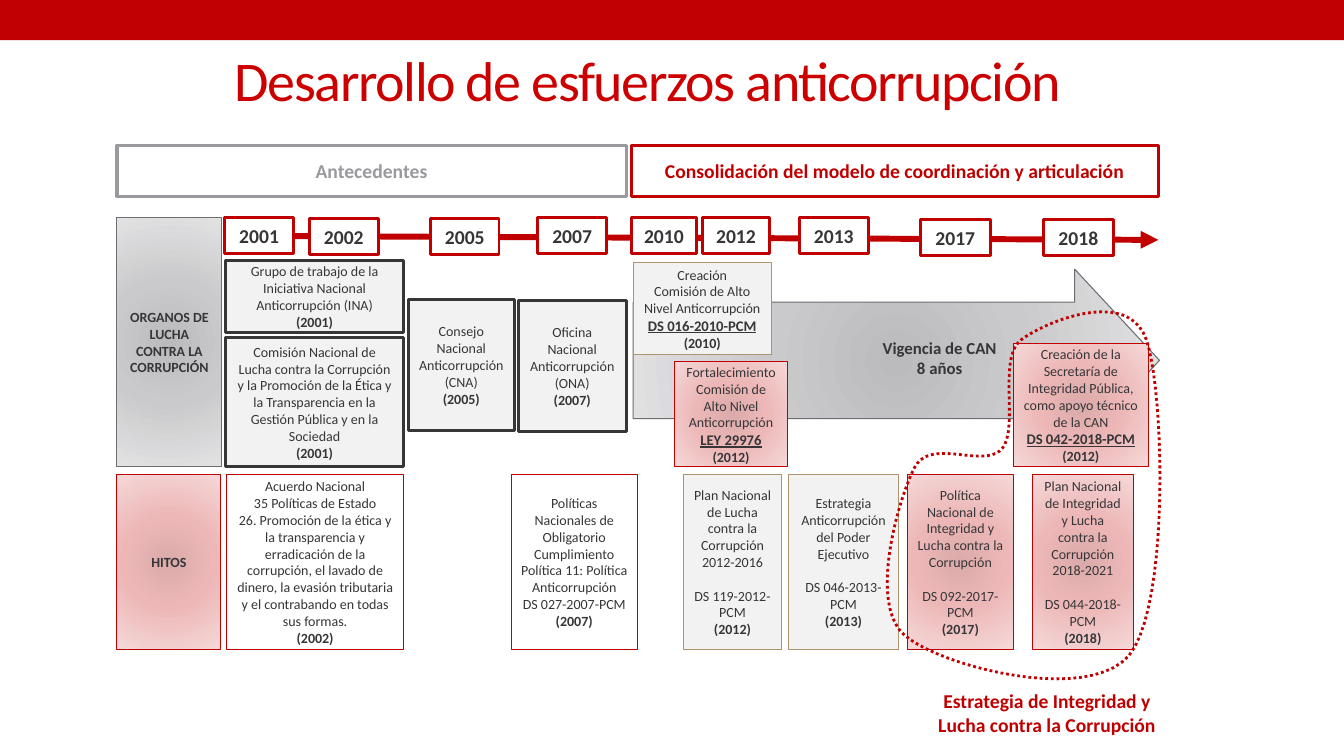
from lxml.etree import SubElement
from pptx import Presentation
from pptx.dml.color import RGBColor
from pptx.enum.dml import MSO_LINE
from pptx.enum.shapes import MSO_CONNECTOR, MSO_SHAPE
from pptx.enum.text import MSO_ANCHOR, PP_ALIGN
from pptx.oxml import parse_xml
from pptx.oxml.ns import nsdecls, qn
from pptx.util import Inches, Pt

# Content
TITLE = "Desarrollo de esfuerzos anticorrupción"
RED, INK, GREY, TAN, SLATE = "C00000", "363639", "99999E", "AC956E", "6C6C72"
ASH = ("BBBBBD", "CACACC", "E2E2E3")
ROSE = ("DBAAAA", "EDB7B7", "F5D8D8")

# Style: fill, line colour, line width
STYLES = {
    "year": ("FFFFFF", RED, 2.08),
    "body": ("F2F2F2", INK, 2.08),
    "tan": ("F2F2F2", TAN, 0.75),
    "white": ("FFFFFF", RED, 0.75),
    "rose": (ROSE, RED, 0.75),
    "ash": (ASH, SLATE, 0.75),
    "past": (None, GREY, 2.25),
    "now": (None, RED, 2.25),
    "plain": (None, None, 0),
}

PHASES = [
    (1.16, 5.05, "past", GREY, "Antecedentes"),
    (6.26, 5.23, "now", RED, "Consolidación del modelo de coordinación y articulación"),
]
YEARS = [
    (2.23, 2.16, 0.68, "2001"), (3.07, 2.17, 0.68, "2002"), (4.27, 2.17, 0.68, "2005"),
    (5.33, 2.16, 0.69, "2007"), (6.26, 2.16, 0.65, "2010"), (6.97, 2.16, 0.66, "2012"),
    (7.93, 2.16, 0.68, "2013"), (9.13, 2.18, 0.69, "2017"), (10.35, 2.18, 0.69, "2018"),
]
HEADS = [
    (1.16, 2.16, 1.04, 2.47, "ash", "ORGANOS DE LUCHA CONTRA LA CORRUPCIÓN"),
    (1.16, 4.71, 1.03, 1.73, "rose", "HITOS"),
]
# Line marks: * bold, _ bold and underlined, ^ gap above
BODIES = [
    (2.24, 2.58, 1.76, 0.72, "body", [
        "Grupo de trabajo de la Iniciativa Nacional Anticorrupción (INA)", "*(2001)"]),
    (2.24, 3.35, 1.76, 1.28, "body", [
        "Comisión Nacional de Lucha contra la Corrupción y la Promoción de la Ética "
        "y la Transparencia en la Gestión Pública y en la Sociedad", "*(2001)"]),
    (4.05, 2.97, 1.05, 1.3, "body", ["Consejo Nacional Anticorrupción (CNA)", "*(2005)"]),
    (5.14, 2.98, 1.07, 1.3, "body", ["Oficina Nacional Anticorrupción (ONA)", "*(2007)"]),
    (6.28, 2.6, 1.37, 0.92, "tan", [
        "Creación", "Comisión de Alto Nivel Anticorrupción", "_DS 016-2010-PCM", "*(2010)"]),
    (6.69, 3.59, 1.12, 1.04, "rose", [
        "Fortalecimiento Comisión de Alto Nivel Anticorrupción", "_LEY 29976", "*(2012)"]),
    (10.05, 3.41, 1.34, 1.22, "rose", [
        "Creación de la Secretaría de Integridad Pública, como apoyo técnico de la CAN",
        "_DS 042-2018-PCM", "*(2012)"]),
]
MARKS_TOP, MARKS_HIGH = 4.71, 1.73
MARKS = [
    (2.25, 1.75, "white", [
        "Acuerdo Nacional", "35 Políticas de Estado",
        "26. Promoción de la ética y la transparencia y erradicación de la corrupción, "
        "el lavado de dinero, la evasión tributaria y el contrabando en todas sus formas.",
        "*(2002)"]),
    (5.07, 1.25, "white", [
        "Políticas Nacionales de Obligatorio Cumplimiento Política 11: Política Anticorrupción",
        "DS 027-2007-PCM", "*(2007)"]),
    (6.78, 0.97, "tan", [
        "Plan Nacional de Lucha contra la Corrupción 2012-2016", "^DS 119-2012-PCM", "*(2012)"]),
    (7.82, 1.09, "tan", [
        "Estrategia Anticorrupción del Poder Ejecutivo", "^DS 046-2013-PCM", "*(2013)"]),
    (9, 1.05, "rose", [
        "Política Nacional de Integridad y Lucha contra la Corrupción",
        "^DS 092-2017-PCM", "*(2017)"]),
    (10.24, 1, "rose", [
        "Plan Nacional de Integridad y Lucha contra la Corrupción", "2018-2021",
        "^DS 044-2018-PCM", "*(2018)"]),
]
NOTES = [
    (8.54, 3.3, 1.56, 0.5, 12, INK, ["*Vigencia de CAN", "*8 años"]),
    (9.07, 6.79, 2.63, 0.57, 14, RED, ["*Estrategia de Integridad y Lucha contra la Corrupción"]),
]
# Dotted loop: start, then two handles and an end for each curve
START = (11.37, 3.37)
CURVES = [
    ((11.19, 2.85), (10.37, 3.19), (10.13, 3.37)),
    ((9.89, 3.55), (10.11, 4.24), (9.94, 4.45)),
    ((9.76, 4.66), (9.23, 4.33), (9.07, 4.64)),
    ((8.91, 4.95), (8.61, 5.99), (8.97, 6.3)),
    ((9.32, 6.61), (10.79, 6.99), (11.2, 6.5)),
    ((11.6, 6.01), (11.55, 3.89), START),
]

deck = Presentation()
deck.slide_width, deck.slide_height = Inches(13.33), Inches(7.5)
slide = deck.slides.add_slide(deck.slide_layouts[5])
shapes = slide.shapes


def color(code):
    return RGBColor.from_string(code)


def glow(shape, tones):
    stops = "".join(
        f'<a:gs pos="{pos}000"><a:srgbClr val="{tone}"/></a:gs>'
        for pos, tone in zip((0, 45, 100), tones))
    fill = parse_xml(
        f'<a:gradFill {nsdecls("a")} rotWithShape="1"><a:gsLst>{stops}</a:gsLst>'
        '<a:path path="circle"><a:fillToRect l="50000" t="50000" r="50000" b="50000"/>'
        '</a:path></a:gradFill>')
    shape._element.spPr.find(qn("a:prstGeom")).addnext(fill)


def paint(shape, style):
    fill, line, width = STYLES[style]
    shape.shadow.inherit = False
    if isinstance(fill, tuple):
        glow(shape, fill)
    elif fill:
        shape.fill.solid()
        shape.fill.fore_color.rgb = color(fill)
    else:
        shape.fill.background()
    if line:
        shape.line.color.rgb = color(line)
        shape.line.width = Pt(width)
    else:
        shape.line.fill.background()


def write(shape, lines, size, ink, anchor=MSO_ANCHOR.MIDDLE):
    frame = shape.text_frame
    frame.word_wrap = True
    frame.vertical_anchor = anchor
    for i, line in enumerate(lines):
        para = frame.add_paragraph() if i else frame.paragraphs[0]
        para.alignment = PP_ALIGN.CENTER
        if line[0] == "^":
            para.space_before = Pt(12)
        run = para.add_run()
        run.text = line.lstrip("*_^")
        font = run.font
        font.name, font.color.rgb = "Calibri", color(ink)
        font.size = Pt(10.5 if line[0] == "_" else size)
        font.bold = line[0] in "*_"
        font.underline = line[0] == "_"


def block(x, y, w, h, style, lines=(), size=10, ink=INK, kind=MSO_SHAPE.RECTANGLE):
    shape = shapes.add_shape(kind, Inches(x), Inches(y), Inches(w), Inches(h))
    paint(shape, style)
    write(shape, lines, size, ink)
    return shape


# Top band and title
band = block(0, 0, 13.33, 0.4, "plain")
band.fill.solid()
band.fill.fore_color.rgb = color(RED)
title = shapes.title
title.left, title.top, title.width, title.height = map(Inches, (0.97, 0.31, 10.91, 0.96))
write(title, [TITLE], 40, "CC0000")
title.text_frame.paragraphs[0].runs[0]._r.get_or_add_rPr().set("spc", "-100")

# Wide arrow and time line
arrow = block(6.28, 2.67, 5.22, 1.81, "ash", kind=MSO_SHAPE.RIGHT_ARROW)
arrow.adjustments[0], arrow.adjustments[1] = 0.638, 0.465
axis = shapes.add_connector(
    MSO_CONNECTOR.STRAIGHT, *map(Inches, (2.23, 2.34, 11.49, 2.38)))
axis.line.color.rgb = color(RED)
axis.line.width = Pt(4.25)
SubElement(axis._element.spPr.find(qn("a:ln")), qn("a:tailEnd"), type="triangle")
SubElement(axis._element.spPr, qn("a:effectLst"))

# Phases, years and row heads
for x, w, style, ink, text in PHASES:
    block(x, 1.44, w, 0.51, style, ["*" + text], 14, ink)
for x, y, w, text in YEARS:
    block(x, y, w, 0.36, "year", ["*" + text], 14)
for x, y, w, h, style, text in HEADS:
    block(x, y, w, h, style, ["*" + text])

# Bodies and milestones
for item in BODIES:
    block(*item)
for x, w, style, lines in MARKS:
    block(x, MARKS_TOP, w, MARKS_HIGH, style, lines)

# Dotted loop, each curve drawn in short steps
STEPS = 20
dots, last = [], START
for one, two, end in CURVES:
    for t in (n / STEPS for n in range(1, STEPS + 1)):
        u = 1 - t
        dots.append(tuple(
            Inches(u**3 * a + 3 * u * u * t * b + 3 * u * t * t * c + t**3 * d)
            for a, b, c, d in zip(last, one, two, end)))
    last = end
pen = shapes.build_freeform(*map(Inches, START))
pen.add_line_segments(dots, close=True)
loop = pen.convert_to_shape()
paint(loop, "now")
loop.line.width = Pt(2)
loop.line.dash_style = MSO_LINE.ROUND_DOT

# Free notes
for x, y, w, h, size, ink, lines in NOTES:
    note = shapes.add_textbox(Inches(x), Inches(y), Inches(w), Inches(h))
    write(note, lines, size, ink, MSO_ANCHOR.TOP)

deck.save("out.pptx")
